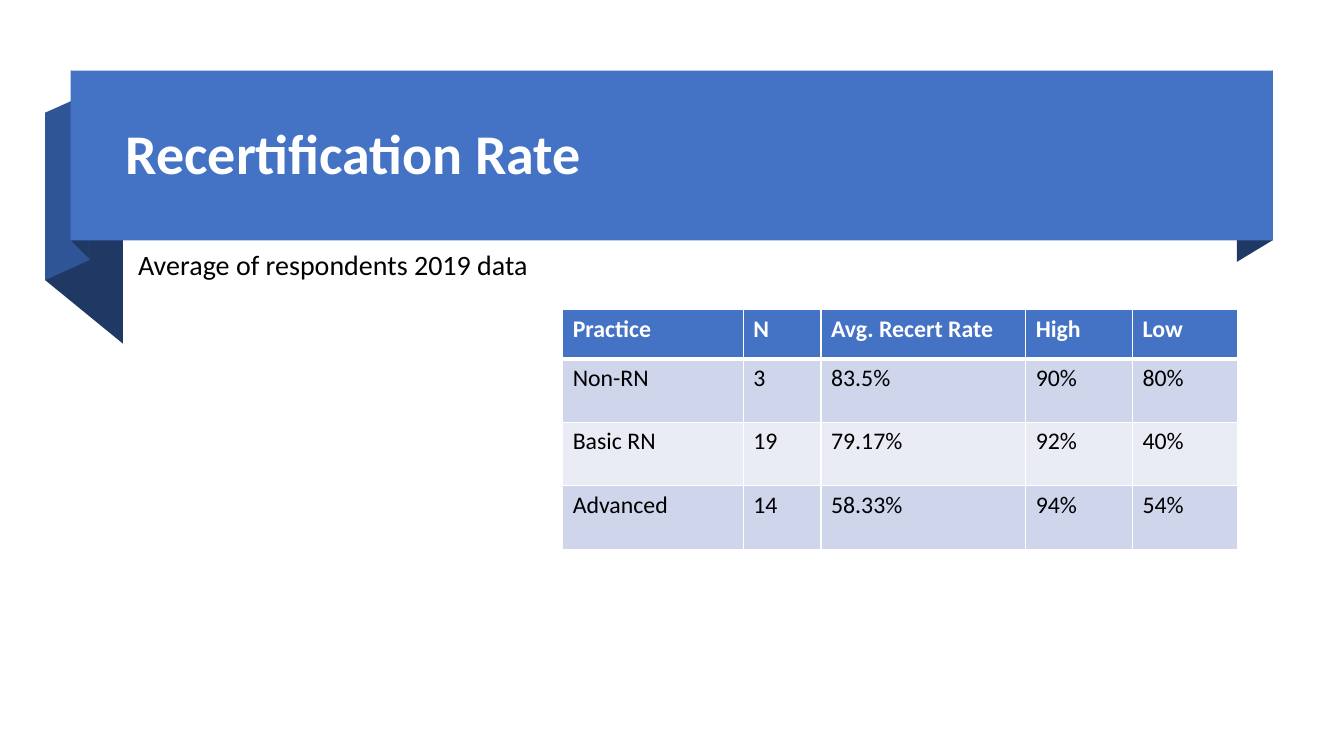
"""Build the Recertification Rate slide: a folded ribbon title, a subtitle and a table."""
from lxml.etree import SubElement
from pptx import Presentation
from pptx.dml.color import RGBColor
from pptx.enum.shapes import MSO_SHAPE
from pptx.enum.text import MSO_ANCHOR
from pptx.oxml.ns import qn
from pptx.util import Cm, Pt

WHITE = RGBColor(0xFF, 0xFF, 0xFF)
BLACK = RGBColor(0, 0, 0)
BLUE = RGBColor(0x44, 0x72, 0xC4)
MID_BLUE = RGBColor(0x2F, 0x55, 0x97)
NAVY = RGBColor(0x20, 0x38, 0x64)
BAND_DARK = RGBColor(0xCF, 0xD5, 0xEA)
BAND_LIGHT = RGBColor(0xE9, 0xEB, 0xF5)
FONT = "Calibri"

TITLE = "Recertification Rate"
SUBTITLE = "Average of respondents 2019 data"
RATES = [
    ("Practice", "N", "Avg. Recert Rate", "High", "Low"),
    ("Non-RN", "3", "83.5%", "90%", "80%"),
    ("Basic RN", "19", "79.17%", "92%", "40%"),
    ("Advanced", "14", "58.33%", "94%", "54%"),
]
COLUMN_WIDTHS = (4.55, 1.96, 5.16, 2.69, 2.64)
ROW_HEIGHTS = (1.24, 1.6, 1.6, 1.6)
TABLE_LEFT, TABLE_TOP = 14.18, 7.8

RIBBON = (1.78, 1.78, 30.3, 4.28)
FOLDS = [
    {"left": (31.17, 2.31, 6.6), "right": (32.08, 1.78, 6.05), "color": NAVY},
    {"left": (1.14, 2.84, 7.06), "right": (3.1, 4.45, 8.66), "color": NAVY},
    {"left": (1.14, 2.84, 7.06), "right": (2.26, 2.34, 6.55), "color": MID_BLUE},
    {"left": (1.8, 1.78, 6.07), "right": (2.26, 2.26, 6.53), "color": NAVY},
]


def paint(shape, color):
    shape.shadow.inherit = False
    shape.fill.solid()
    shape.fill.fore_color.rgb = color
    shape.line.fill.background()


def style_run(paragraph, size, color, bold=False):
    font = paragraph.runs[0].font
    font.name, font.size, font.bold = FONT, Pt(size), bold
    font.color.rgb = color


def add_fold(slide, left, right, color):
    left_x, left_top, left_bottom = left
    right_x, right_top, right_bottom = right
    corners = [(left_x, left_bottom), (left_x, left_top), (right_x, right_top)]
    outline = slide.shapes.build_freeform(Cm(right_x), Cm(right_bottom))
    outline.add_line_segments([(Cm(x), Cm(y)) for x, y in corners])
    paint(outline.convert_to_shape(), color)


def add_words(slide, words, box, size, color, bold=False, anchor=MSO_ANCHOR.TOP, before=0):
    frame = slide.shapes.add_textbox(*map(Cm, box)).text_frame
    frame.word_wrap = True
    frame.vertical_anchor = anchor
    frame.text = words
    paragraph = frame.paragraphs[0]
    paragraph.line_spacing = 0.9
    paragraph.space_before = Pt(before)
    style_run(paragraph, size, color, bold)


def add_borders(cell, widths):
    properties = cell._tc.get_or_add_tcPr()
    for position, (side, width) in enumerate(widths.items()):
        line = SubElement(properties, qn(f"a:{side}"), w=str(Pt(width)))
        fill = SubElement(line, qn("a:solidFill"))
        SubElement(fill, qn("a:srgbClr"), val=str(WHITE))
        properties.insert(position, line)


def add_rates(slide):
    size = sum(COLUMN_WIDTHS), sum(ROW_HEIGHTS)
    table = slide.shapes.add_table(
        len(RATES), len(COLUMN_WIDTHS), *map(Cm, (TABLE_LEFT, TABLE_TOP, *size))
    ).table
    for column, width in zip(table.columns, COLUMN_WIDTHS):
        column.width = Cm(width)
    for row, height in zip(table.rows, ROW_HEIGHTS):
        row.height = Cm(height)
    for r, values in enumerate(RATES):
        header = r == 0
        band = BLUE if header else BAND_DARK if r % 2 else BAND_LIGHT
        for c, value in enumerate(values):
            cell = table.cell(r, c)
            cell.text = value
            cell.fill.solid()
            cell.fill.fore_color.rgb = band
            style_run(cell.text_frame.paragraphs[0], 17, WHITE if header else BLACK, header)
            add_borders(cell, {"lnL": 1, "lnR": 1, "lnT": 3 if r == 1 else 1,
                               "lnB": 3 if header else 1})


def main():
    deck = Presentation()
    deck.slide_width, deck.slide_height = Cm(33.87), Cm(19.05)
    slide = deck.slides.add_slide(deck.slide_layouts[6])
    for fold in FOLDS:
        add_fold(slide, **fold)
    paint(slide.shapes.add_shape(MSO_SHAPE.RECTANGLE, *map(Cm, RIBBON)), BLUE)
    add_words(slide, TITLE, (2.92, 2.11, 28.63, 3.68), 40, WHITE, True, MSO_ANCHOR.MIDDLE)
    add_words(slide, SUBTITLE, (3.23, 6.2, 17.6, 2.59), 20, BLACK, before=10)
    add_rates(slide)
    deck.save("out.pptx")


if __name__ == "__main__":
    main()
